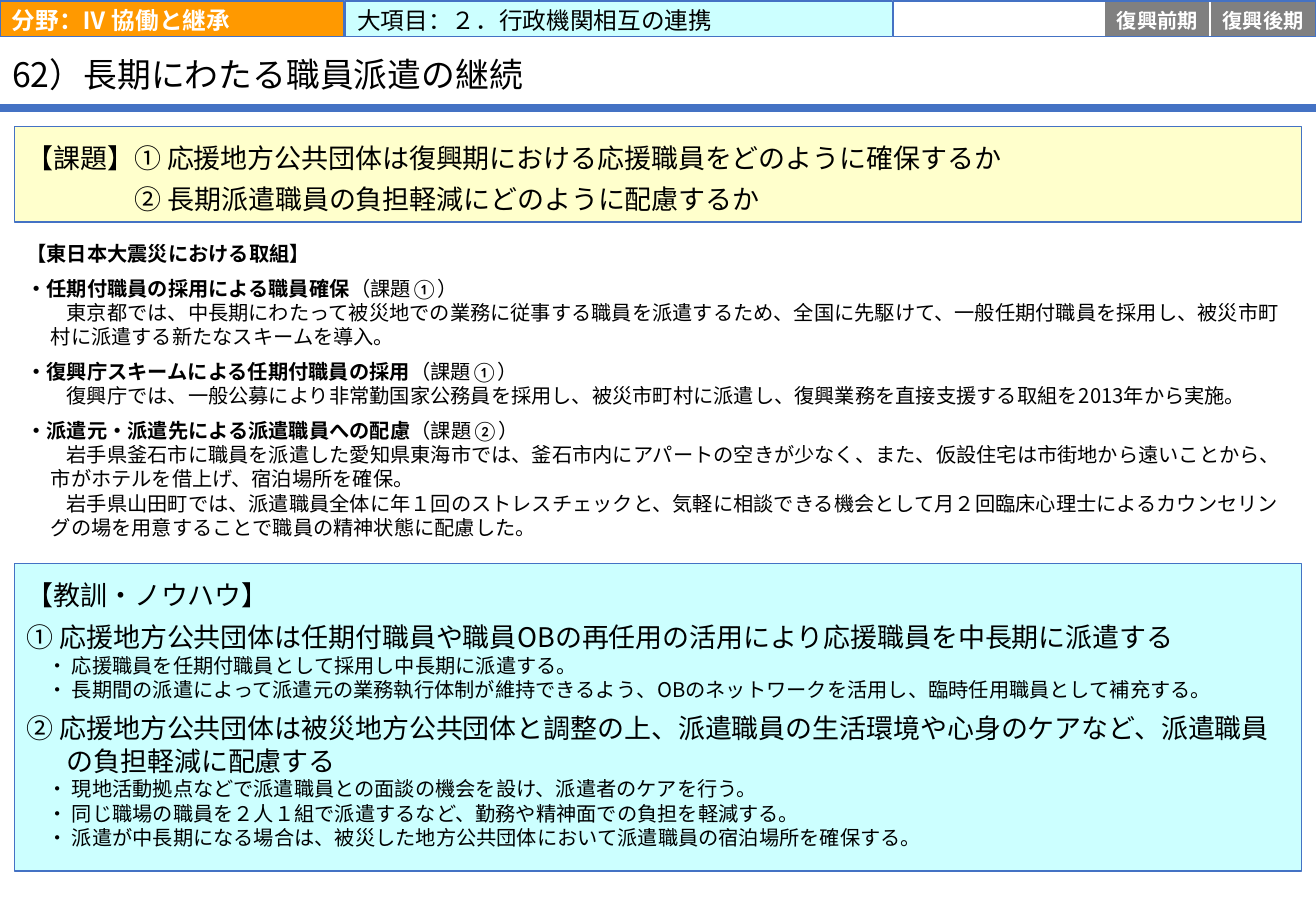
from dataclasses import dataclass
from typing import Optional

from lxml.etree import SubElement
from pptx import Presentation
from pptx.dml.color import RGBColor
from pptx.enum.shapes import MSO_CONNECTOR, MSO_SHAPE
from pptx.enum.text import MSO_ANCHOR, PP_ALIGN
from pptx.oxml.ns import qn
from pptx.util import Emu, Pt

PX = 9144  # 100 px to the inch
LATIN, GOTHIC = "Calibri", "Noto Sans CJK JP"
BLACK, WHITE, BLUE, GREY = "000000", "FFFFFF", "4472C4", "808080"
ORANGE, CYAN, YELLOW = "FF9900", "CCFFFF", "FFFFCC"


@dataclass(frozen=True)
class Para:
    text: str
    size: int = 12
    font: str = GOTHIC
    color: str = BLACK
    bold: bool = False
    tail: str = ""  # regular-weight text after the main run
    left: int = 0
    first: int = 0
    before: int = 0
    spacing: Optional[float | Pt] = None
    align: PP_ALIGN = PP_ALIGN.LEFT


@dataclass(frozen=True)
class Box:
    x: int
    y: int
    w: int
    h: int
    fill: Optional[str] = None
    line: Optional[str] = None
    paras: tuple[Para, ...] = ()
    insets: tuple[int, int, int, int] = (10, 5, 10, 5)
    anchor: MSO_ANCHOR = MSO_ANCHOR.MIDDLE


def px(n: int) -> Emu:
    return Emu(n * PX)


def rgb(color: str) -> RGBColor:
    return RGBColor.from_string(color)


def write_para(p, para: Para) -> None:
    p.alignment = para.align
    p.space_before = Pt(para.before)
    if para.spacing:
        p.line_spacing = para.spacing
    p.font.size = Pt(para.size)
    p.font.color.rgb = rgb(para.color)
    p.font.name = para.font
    pPr = p._p.get_or_add_pPr()
    pPr.set("marL", str(px(para.left)))
    pPr.set("indent", str(px(para.first)))
    for text, bold in ((para.text, para.bold), (para.tail, False)):
        if text:
            r = p.add_run()
            r.text = text
            r.font.bold = bold
            r.font.name = para.font
            SubElement(r._r.rPr, qn("a:ea"), typeface=para.font)


def write_text(tf, box: Box) -> None:
    tf.word_wrap = True
    tf.vertical_anchor = box.anchor
    tf.margin_left, tf.margin_top, tf.margin_right, tf.margin_bottom = map(px, box.insets)
    for i, para in enumerate(box.paras):
        write_para(tf.add_paragraph() if i else tf.paragraphs[0], para)


def draw_box(s, box: Box) -> None:
    sp = s.shapes.add_shape(MSO_SHAPE.RECTANGLE, *map(px, (box.x, box.y, box.w, box.h)))
    sp.shadow.inherit = False
    if box.fill:
        sp.fill.solid()
        sp.fill.fore_color.rgb = rgb(box.fill)
    else:
        sp.fill.background()
    if box.line:
        sp.line.color.rgb = rgb(box.line)
        sp.line.width = Pt(1)
    else:
        sp.line.fill.background()
    write_text(sp.text_frame, box)


def draw_title(s, box: Box) -> None:
    sp = s.shapes.title
    sp.left, sp.top, sp.width, sp.height = map(px, (box.x, box.y, box.w, box.h))
    write_text(sp.text_frame, box)


def draw_rule(s, y: int, width: int) -> None:
    line = s.shapes.add_connector(MSO_CONNECTOR.STRAIGHT, px(0), px(y), px(width), px(y))
    line.line.color.rgb = rgb(BLUE)
    line.line.width = Pt(4.5)
    SubElement(line._element.spPr, qn("a:effectLst"))


def effort(text: str, issue: str) -> Para:
    return Para(f"・{text}", font=LATIN, bold=True, tail=f"（課題{issue}）", before=6)


def detail(text: str) -> Para:
    return Para(text, left=20, first=13)


def lesson(text: str) -> Para:
    return Para(text, 16, left=33, first=-33, before=6)


def tip(text: str) -> Para:
    return Para(f"・ {text}", left=41, first=-24)


TITLE = Box(0, 32, 948, 58, insets=(10, 4, 10, 0),
            paras=(Para("62）長期にわたる職員派遣の継続", 20, spacing=0.9),))

EFFORTS = (
    Para("【東日本大震災における取組】", font=LATIN, bold=True),
    effort("任期付職員の採用による職員確保", "①"),
    detail("東京都では、中長期にわたって被災地での業務に従事する職員を派遣するため、全国に先駆けて、"
           "一般任期付職員を採用し、被災市町村に派遣する新たなスキームを導入。"),
    effort("復興庁スキームによる任期付職員の採用", "①"),
    detail("復興庁では、一般公募により非常勤国家公務員を採用し、被災市町村に派遣し、"
           "復興業務を直接支援する取組を2013年から実施。"),
    effort("派遣元・派遣先による派遣職員への配慮", "②"),
    detail("岩手県釜石市に職員を派遣した愛知県東海市では、釜石市内にアパートの空きが少なく、また、"
           "仮設住宅は市街地から遠いことから、市がホテルを借上げ、宿泊場所を確保。"),
    detail("岩手県山田町では、派遣職員全体に年１回のストレスチェックと、気軽に相談できる機会として"
           "月２回臨床心理士によるカウンセリングの場を用意することで職員の精神状態に配慮した。"),
)
ISSUES = (
    Para("【課題】① 応援地方公共団体は復興期における応援職員をどのように確保するか", 16, spacing=Pt(24)),
    Para("② 長期派遣職員の負担軽減にどのように配慮するか", 16, left=89, spacing=Pt(24)),
)
LESSONS = (
    Para("【教訓・ノウハウ】", 16),
    lesson("① 応援地方公共団体は任期付職員や職員OBの再任用の活用により応援職員を中長期に派遣する"),
    tip("応援職員を任期付職員として採用し中長期に派遣する。"),
    tip("長期間の派遣によって派遣元の業務執行体制が維持できるよう、"
        "OBのネットワークを活用し、臨時任用職員として補充する。"),
    lesson("② 応援地方公共団体は被災地方公共団体と調整の上、"
           "派遣職員の生活環境や心身のケアなど、派遣職員の負担軽減に配慮する"),
    tip("現地活動拠点などで派遣職員との面談の機会を設け、派遣者のケアを行う。"),
    tip("同じ職場の職員を２人１組で派遣するなど、勤務や精神面での負担を軽減する。"),
    tip("派遣が中長期になる場合は、被災した地方公共団体において派遣職員の宿泊場所を確保する。"),
)
BOXES = (
    Box(12, 187, 1059, 269, WHITE, paras=EFFORTS),
    Box(0, 1, 283, 29, ORANGE, BLUE, insets=(10, 2, 10, 0),
        paras=(Para("分野：Ⅳ 協働と継承", 14, LATIN, WHITE, True),)),
    Box(284, 1, 453, 29, CYAN, BLUE, insets=(10, 2, 10, 0),
        paras=(Para("大項目：２．行政機関相互の連携", 14, LATIN),)),
    Box(12, 104, 1059, 79, YELLOW, BLUE, ISSUES, (10, 12, 10, 12)),
    Box(12, 464, 1059, 253, CYAN, BLUE, LESSONS, (10, 12, 10, 0), MSO_ANCHOR.TOP),
)
PHASES = ("", "", "復興前期", "復興後期")
PHASE_X, PHASE_W = 735, 87


def draw_phases(s) -> None:
    for i, name in enumerate(PHASES):
        label = (Para(name, 12, LATIN, WHITE, True, align=PP_ALIGN.CENTER),) if name else ()
        draw_box(s, Box(PHASE_X + i * PHASE_W, 1, PHASE_W, 29, GREY if name else WHITE,
                        WHITE, label, (0, 2, 0, 0)))
    draw_box(s, Box(PHASE_X, 1, PHASE_W * len(PHASES), 29, line=BLUE))


def main() -> None:
    prs = Presentation()
    prs.slide_width, prs.slide_height = px(1083), px(750)
    s = prs.slides.add_slide(prs.slide_layouts[5])
    draw_rule(s, 89, 1083)
    draw_title(s, TITLE)
    for box in BOXES:
        draw_box(s, box)
    draw_phases(s)
    prs.save("out.pptx")


if __name__ == "__main__":
    main()
